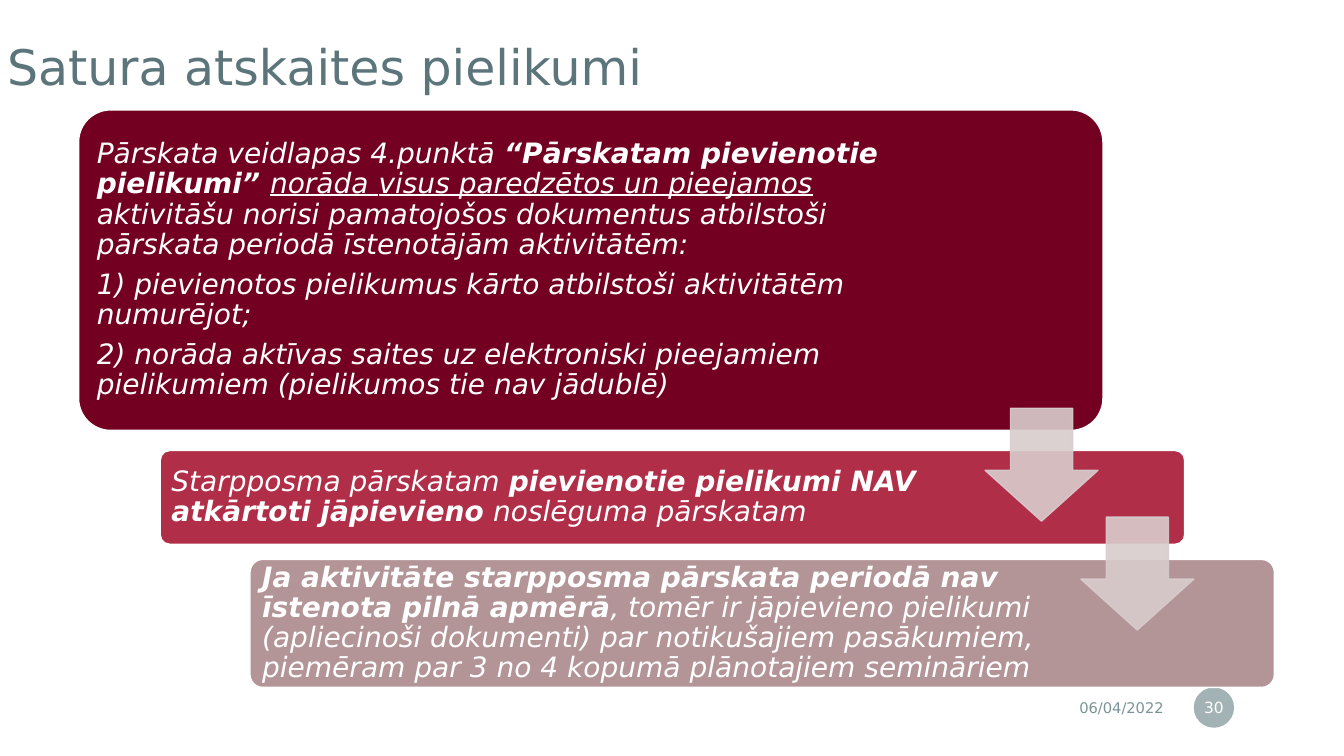
from lxml import etree
from pptx import Presentation
from pptx.dml.color import RGBColor
from pptx.enum.shapes import MSO_SHAPE
from pptx.enum.text import MSO_ANCHOR, PP_ALIGN
from pptx.oxml.ns import qn
from pptx.util import Inches, Pt

ROUND, OVAL, ARROW = (MSO_SHAPE.ROUNDED_RECTANGLE, MSO_SHAPE.OVAL,
                      MSO_SHAPE.DOWN_ARROW)
TOP, MIDDLE = MSO_ANCHOR.TOP, MSO_ANCHOR.MIDDLE
LEFT, CENTER, RIGHT = PP_ALIGN.LEFT, PP_ALIGN.CENTER, PP_ALIGN.RIGHT

FONT = "DejaVu Sans"
WHITE = RGBColor(0xFF, 0xFF, 0xFF)
SLATE = RGBColor(0x5B, 0x75, 0x7A)
GREY = RGBColor(0x7C, 0x93, 0x96)
MAROON = RGBColor(0x74, 0x00, 0x21)
CRIMSON = RGBColor(0xB0, 0x2E, 0x47)
ROSE = RGBColor(0xB3, 0x95, 0x98)
PALE = RGBColor(0xD8, 0xCC, 0xCD)

# Content: runs are (text, style), style letters b = bold, u = underlined
TITLE = "Satura atskaites pielikumi"
DATE = "06/04/2022"
NUMBER = "30"
FORM_TEXT = [
    [("Pārskata veidlapas 4.punktā ", ""),
     ("“Pārskatam pievienotie pielikumi” ", "b"),
     ("norāda", "u"), (" ", "bu"), ("visus paredzētos un pieejamos ", "u"),
     ("aktivitāšu norisi pamatojošos dokumentus atbilstoši pārskata periodā "
      "īstenotājām aktivitātēm:", "")],
    [("1) pievienotos pielikumus kārto atbilstoši aktivitātēm numurējot;", "")],
    [("2) norāda aktīvas saites uz elektroniski pieejamiem pielikumiem "
      "(pielikumos tie nav jādublē)", "")],
]
INTERIM_TEXT = [
    [("Starpposma pārskatam ", ""),
     ("pievienotie pielikumi NAV atkārtoti jāpievieno", "b"),
     (" noslēguma pārskatam", "")],
]
PARTIAL_TEXT = [
    [("Ja aktivitāte starpposma pārskata periodā nav īstenota pilnā apmērā", "b"),
     (", tomēr ir jāpievieno pielikumi (apliecinoši dokumenti) par notikušajiem "
      "pasākumiem, piemēram par 3 no 4 kopumā plānotajiem semināriem", "")],
]
# Steps: left, top, height, fill, text inset from the card, text width, text
STEP_W = 10.16
STEPS = [
    (0.78, 1.09, 3.18, MAROON, 0.1, 8.22, FORM_TEXT),
    (1.59, 4.47, 0.93, CRIMSON, 0.03, 8.09, INTERIM_TEXT),
    (2.48, 5.55, 1.27, ROSE, 0.04, 8.07, PARTIAL_TEXT),
]
ARROW_SIZE = 1.12
ARROWS = [(9.77, 4.05), (10.72, 5.13)]

prs = Presentation()
prs.slide_width, prs.slide_height = Inches(13.33), Inches(7.5)
s = prs.slides.add_slide(prs.slide_layouts[6])


def set_alpha(fill, percent):
    color = fill._xPr.find(qn("a:solidFill"))[0]
    etree.SubElement(color, qn("a:alpha")).set("val", str(percent * 1000))


def add_shape(kind, box, fill, line=None, alpha=100):
    sp = s.shapes.add_shape(kind, *map(Inches, box))
    sp.shadow.inherit = False
    sp.fill.solid()
    sp.fill.fore_color.rgb = fill
    if line is None:
        sp.line.fill.background()
    else:
        sp.line.color.rgb = line
        sp.line.width = Pt(1)
    if alpha < 100:
        set_alpha(sp.fill, alpha)
        if line is not None:
            set_alpha(sp.line.fill, alpha)
    return sp


def add_textbox(box):
    return s.shapes.add_textbox(*map(Inches, box))


def write(sp, paragraphs, size, color, insets, align=LEFT, anchor=MIDDLE,
          italic=False, spacing=1.0):
    tf = sp.text_frame
    tf.word_wrap = True
    tf.vertical_anchor = anchor
    (tf.margin_left, tf.margin_top,
     tf.margin_right, tf.margin_bottom) = map(Inches, insets)
    for i, runs in enumerate(paragraphs):
        p = tf.paragraphs[0] if i == 0 else tf.add_paragraph()
        p.alignment = align
        p.line_spacing = spacing
        if len(paragraphs) > 1:
            p.space_after = Pt(size * 0.35)
        for text, style in runs:
            r = p.add_run()
            r.text = text
            r.font.name = FONT
            r.font.size = Pt(size)
            r.font.color.rgb = color
            r.font.italic = italic
            r.font.bold = "b" in style
            r.font.underline = "u" in style


# Title, date and slide number
write(add_textbox((-0.13, 0.35, 11.41, 1.19)), [[(TITLE, "")]], 35, SLATE,
      (0.2, 0.08, 0.2, 0.2), anchor=TOP, spacing=0.9)
write(add_textbox((8.63, 6.84, 3.01, 0.35)), [[(DATE, "")]], 10.5, GREY,
      (0.1, 0.05, 0.1, 0.05), align=RIGHT)
write(add_shape(OVAL, (11.84, 6.82, 0.4, 0.4), GREY, alpha=70),
      [[(NUMBER, "")]], 11, WHITE, (0.02, 0.05, 0.02, 0.05), align=CENTER)

# Staggered steps
for left, top, height, fill, pad, text_w, text in STEPS:
    card = add_shape(ROUND, (left, top, STEP_W, height), fill, WHITE)
    card.adjustments[0] = 0.1
    label = add_textbox((left + pad, top + pad, text_w, height - 2 * pad))
    write(label, text, 20, WHITE, (0.08,) * 4, italic=True, spacing=0.9)

# Arrows between steps
for left, top in ARROWS:
    arrow = add_shape(ARROW, (left, top, ARROW_SIZE, ARROW_SIZE), PALE, PALE, 90)
    arrow.adjustments[0] = 0.55
    arrow.adjustments[1] = 0.45

prs.save("out.pptx")
